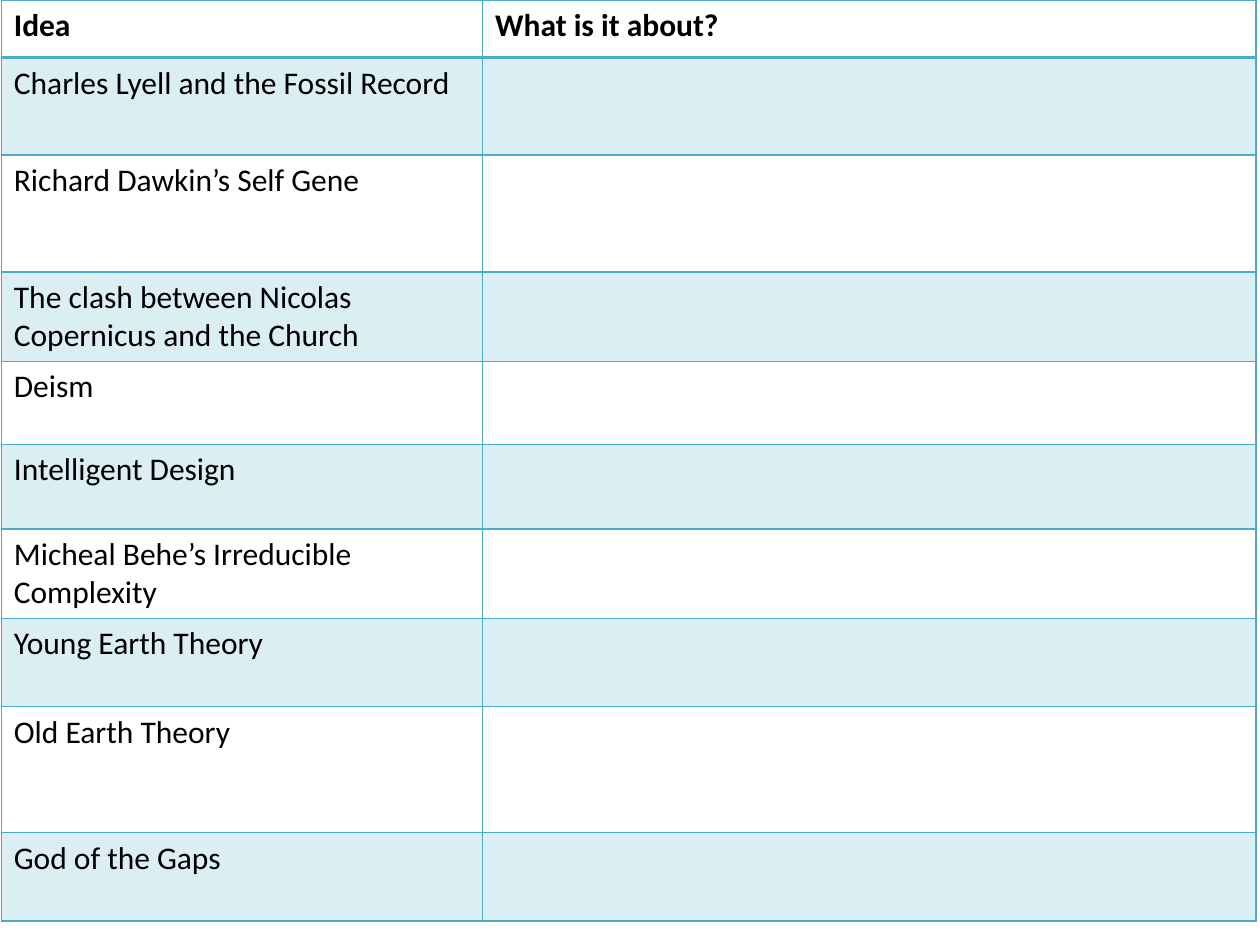
"""Build a worksheet slide with a two-column table of ideas about origins."""
from lxml import etree
from pptx import Presentation
from pptx.dml.color import RGBColor
from pptx.oxml.ns import qn
from pptx.util import Pt

TEAL = RGBColor(0x4B, 0xAC, 0xC6)
BLACK = RGBColor(0, 0, 0)
COLUMN_WIDTHS = [275, 442]
ROWS = [
    ("Idea", 33.1),
    ("Charles Lyell and the Fossil Record", 55.4),
    ("Richard Dawkin’s Self Gene", 67),
    ("The clash between Nicolas Copernicus and the Church", 50.4),
    ("Deism", 47.5),
    ("Intelligent Design", 48.2),
    ("Micheal Behe’s Irreducible Complexity", 50.4),
    ("Young Earth Theory", 50.4),
    ("Old Earth Theory", 72),
    ("God of the Gaps", 50.4),
]


def add_border(cell, side, width):
    line = etree.SubElement(cell._tc.get_or_add_tcPr(), qn(f"a:ln{side}"), w=str(Pt(width)))
    fill = etree.SubElement(line, qn("a:solidFill"))
    etree.SubElement(fill, qn("a:srgbClr"), val=str(TEAL))


def tint(cell, percent):
    cell.fill.solid()
    cell.fill.fore_color.rgb = TEAL
    color = cell._tc.tcPr.find(f"{qn('a:solidFill')}/{qn('a:srgbClr')}")
    etree.SubElement(color, qn("a:alpha"), val=str(percent * 1000))


presentation = Presentation()
presentation.slide_width, presentation.slide_height = Pt(720), Pt(540)
slide = presentation.slides.add_slide(presentation.slide_layouts[6])

total_height = sum(height for _, height in ROWS)
table = slide.shapes.add_table(
    len(ROWS), 2, Pt(0.75), Pt(0), Pt(sum(COLUMN_WIDTHS)), Pt(total_height)
).table
for column, width in zip(table.columns, COLUMN_WIDTHS):
    column.width = Pt(width)

for row_index, (idea, height) in enumerate(ROWS):
    table.rows[row_index].height = Pt(height)
    is_header = row_index == 0
    labels = [idea, "What is it about?" if is_header else ""]
    for column_index, label in enumerate(labels):
        cell = table.cell(row_index, column_index)
        cell.text_frame.text = label
        font = cell.text_frame.paragraphs[0].font
        for run in cell.text_frame.paragraphs[0].runs:
            font = run.font
            font.name = "Calibri"
            font.size = Pt(18)
            font.bold = is_header
            font.color.rgb = BLACK
        for side in "LRTB":
            under_header = (row_index, side) in [(0, "B"), (1, "T")]
            add_border(cell, side, 2 if under_header else 1)
        if row_index % 2:
            tint(cell, 20)
        else:
            cell.fill.background()

presentation.save("out.pptx")
